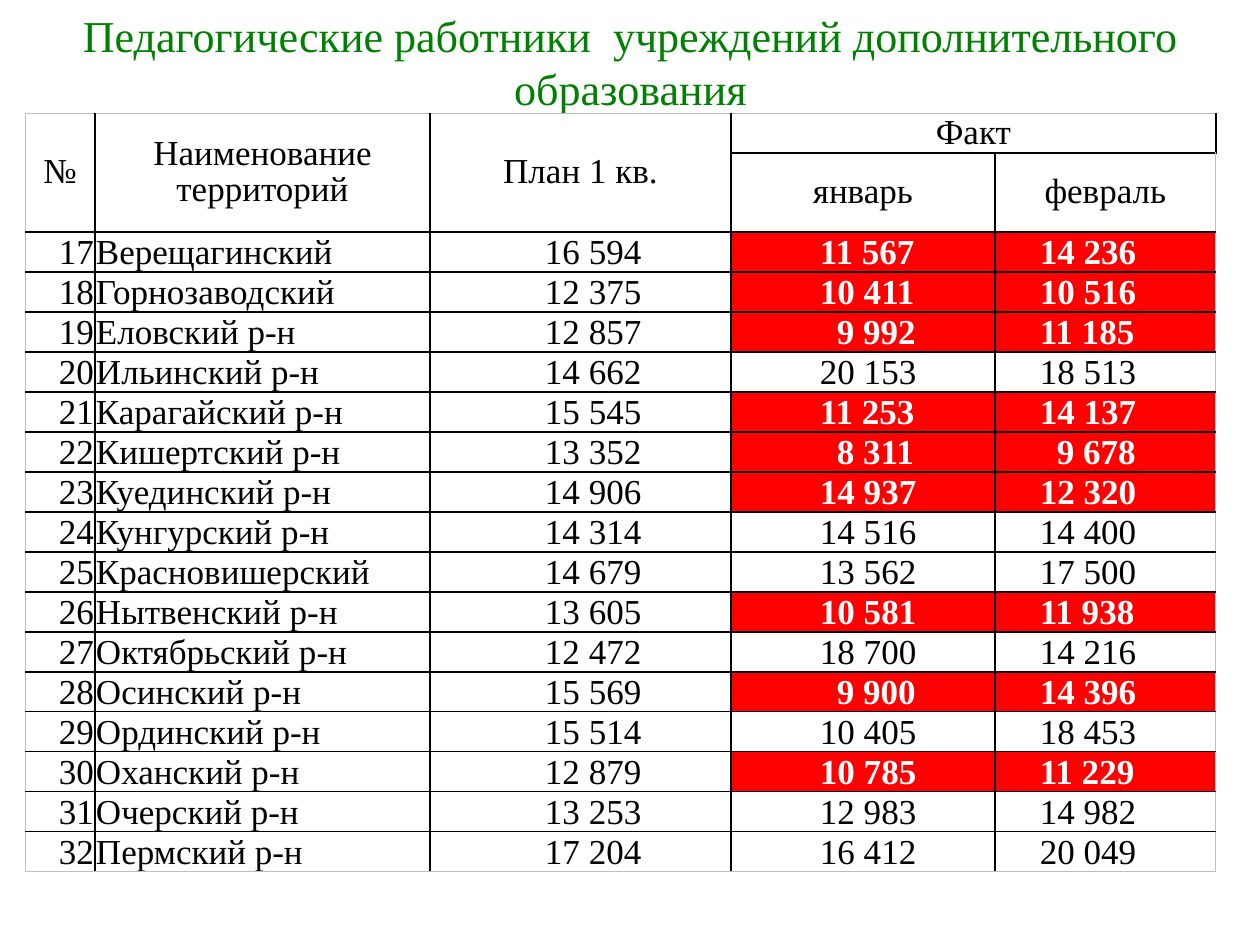
from lxml.etree import SubElement
from pptx import Presentation
from pptx.dml.color import RGBColor
from pptx.enum.text import MSO_ANCHOR as ANCHOR, PP_ALIGN as ALIGN
from pptx.oxml.ns import qn
from pptx.util import Pt

PX = 914400 // 126
FONT = "Times New Roman"
COLORS = {"title": "008000", "text": "000000", "white": "FFFFFF",
          "below": "FF0000", "grid": "000000", "edge": "BFBFBF"}
TITLE = "Педагогические работники  учреждений дополнительного образования"
HEADERS = [(0, 0, "№"), (0, 1, "Наименование территорий"), (0, 2, "План 1 кв."),
           (0, 3, "Факт"), (1, 3, "январь"), (1, 4, "февраль")]
MERGES = [((0, 0), (1, 0)), ((0, 1), (1, 1)), ((0, 2), (1, 2)), ((0, 3), (0, 4))]
COL_WIDTHS = [70, 335, 301, 264, 221]
HEADER_HEIGHTS = [40, 79]
ROW_HEIGHT = 40
INDENTS = [1, 1, 115, 89, 45]
SHORT_INDENT = 17
FIRST_NUMBER = 17
TERRITORIES = [
    ("Верещагинский", 16594, 11567, 14236),
    ("Горнозаводский", 12375, 10411, 10516),
    ("Еловский р-н", 12857, 9992, 11185),
    ("Ильинский р-н", 14662, 20153, 18513),
    ("Карагайский р-н", 15545, 11253, 14137),
    ("Кишертский р-н", 13352, 8311, 9678),
    ("Куединский р-н", 14906, 14937, 12320),
    ("Кунгурский р-н", 14314, 14516, 14400),
    ("Красновишерский", 14679, 13562, 17500),
    ("Нытвенский р-н", 13605, 10581, 11938),
    ("Октябрьский р-н", 12472, 18700, 14216),
    ("Осинский р-н", 15569, 9900, 14396),
    ("Ординский р-н", 15514, 10405, 18453),
    ("Оханский р-н", 12879, 10785, 11229),
    ("Очерский р-н", 13253, 12983, 14982),
    ("Пермский р-н", 17204, 16412, 20049),
]


def write(tf, text, size=20, color="text", bold=False, align=ALIGN.LEFT, spacing=None):
    """Put one formatted paragraph into a text frame."""
    p = tf.paragraphs[0]
    p.alignment = align
    if spacing:
        p.line_spacing = spacing
    r = p.add_run()
    r.text = text
    r.font.name, r.font.size, r.font.bold = FONT, Pt(size), bold
    r.font.color.rgb = RGBColor.from_string(COLORS[color])


def set_borders(cell, row, col, last_row, last_col):
    """Draw black lines inside the grid and a thin grey line round it."""
    outer = {"a:lnL": col == 0, "a:lnR": col == last_col,
             "a:lnT": row == 0, "a:lnB": row == last_row}
    tc_pr = cell._tc.get_or_add_tcPr()
    for tag, is_edge in outer.items():
        ln = SubElement(tc_pr, qn(tag), w=str(Pt(0.5 if is_edge else 1)))
        fill = SubElement(ln, qn("a:solidFill"))
        SubElement(fill, qn("a:srgbClr"), val=COLORS["edge" if is_edge else "grid"])


def style_cell(cell, fill="white", anchor=ANCHOR.BOTTOM, indent=1):
    """Set the fill, anchor and margins of a cell."""
    cell.fill.solid()
    cell.fill.fore_color.rgb = RGBColor.from_string(COLORS[fill])
    cell.vertical_anchor = anchor
    cell.margin_left, cell.margin_right = indent * PX, PX
    cell.margin_top = cell.margin_bottom = 0


def add_title(s, x, y, w, h):
    """Place and format the slide title."""
    sp = s.shapes.title
    sp.left, sp.top, sp.width, sp.height = (v * PX for v in (x, y, w, h))
    tf = sp.text_frame
    tf.word_wrap = True
    tf.vertical_anchor = ANCHOR.MIDDLE
    write(tf, TITLE, size=25.2, color="title", align=ALIGN.CENTER)


def fill_header(table):
    """Merge and label the two header rows."""
    for start, end in MERGES:
        table.cell(*start).merge(table.cell(*end))
    for row, col, text in HEADERS:
        cell = table.cell(row, col)
        style_cell(cell, anchor=ANCHOR.MIDDLE)
        write(cell.text_frame, text, align=ALIGN.CENTER, spacing=0.95)


def fill_territory(table, row, number, territory):
    """Fill one row, marking the facts red when February is below plan."""
    name, *amounts = territory
    below = amounts[2] < amounts[0]
    texts = [str(number), name] + [f"{v:,}".replace(",", " ") for v in amounts]
    for col, text in enumerate(texts):
        marked = below and col > 2
        short = col > 1 and amounts[col - 2] < 10000
        cell = table.cell(row, col)
        style_cell(cell, fill="below" if marked else "white",
                   indent=INDENTS[col] + SHORT_INDENT * short)
        write(cell.text_frame, text, color="white" if marked else "text", bold=marked,
              align=ALIGN.LEFT if col else ALIGN.RIGHT)


def add_salary_table(s, x, y):
    """Add the table of planned and actual amounts by territory."""
    heights = HEADER_HEIGHTS + [ROW_HEIGHT] * len(TERRITORIES)
    rows, cols = len(heights), len(COL_WIDTHS)
    box = (v * PX for v in (x, y, sum(COL_WIDTHS), sum(heights)))
    table = s.shapes.add_table(rows, cols, *box).table
    table.first_row = table.horz_banding = False
    for column, width in zip(table.columns, COL_WIDTHS):
        column.width = width * PX
    for row, height in enumerate(heights):
        table.rows[row].height = height * PX
        for col in range(cols):
            cell = table.cell(row, col)
            set_borders(cell, row, col, rows - 1, cols - 1)
            style_cell(cell)
    fill_header(table)
    for i, territory in enumerate(TERRITORIES):
        fill_territory(table, len(HEADER_HEIGHTS) + i, FIRST_NUMBER + i, territory)


def main():
    """Build the slide and save it."""
    prs = Presentation()
    prs.slide_width, prs.slide_height = 1260 * PX, 945 * PX
    s = prs.slides.add_slide(prs.slide_layouts[5])
    add_title(s, x=35, y=16, w=1191, h=90)
    add_salary_table(s, x=25, y=113)
    prs.save("out.pptx")


if __name__ == "__main__":
    main()
